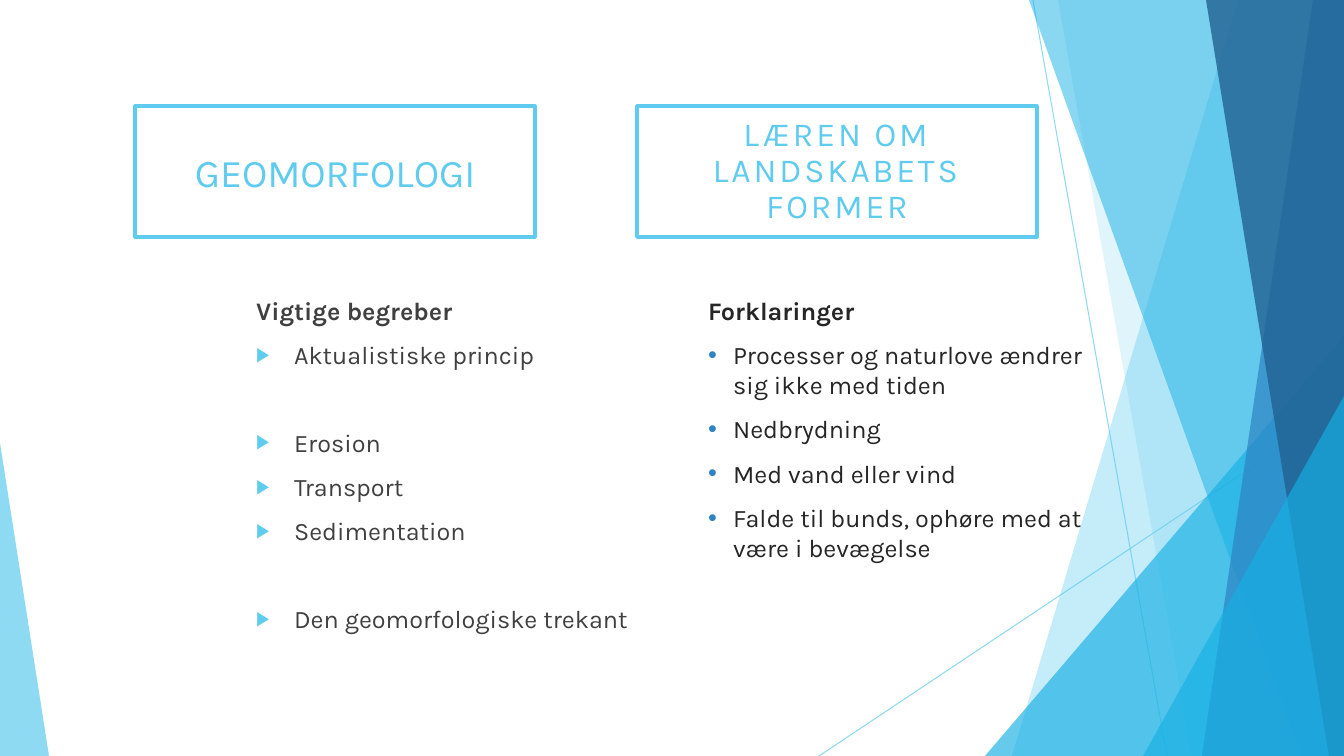
from lxml.etree import SubElement
from pptx import Presentation
from pptx.dml.color import RGBColor
from pptx.enum.shapes import MSO_CONNECTOR, MSO_SHAPE
from pptx.enum.text import MSO_ANCHOR, MSO_AUTO_SIZE, PP_ALIGN
from pptx.oxml.ns import qn
from pptx.util import Pt

EMU_PER_PX = 914400 / 100.8
WIDTH, HEIGHT = 1344, 756
FONT = "Karla"
COLORS = {
    "sky": "5FCBEF",
    "cyan": "17B0E4",
    "blue": "2E83C3",
    "navy": "226292",
    "gray": "404040",
    "ink": "262626",
    "white": "FFFFFF",
}


def px(*lengths):
    return [round(length * EMU_PER_PX) for length in lengths]


def fade(shape, percent):
    """Set the opacity of every colour in the shape's fill and line."""
    for color in list(shape.element.spPr.iter(qn("a:srgbClr"))):
        SubElement(color, qn("a:alpha"), val=str(percent * 1000))


rgb = {name: RGBColor.from_string(value) for name, value in COLORS.items()}

prs = Presentation()
prs.slide_width, prs.slide_height = px(WIDTH, HEIGHT)
slide = prs.slides.add_slide(prs.slide_layouts[3])
shapes = slide.shapes
title, concepts, explanations = slide.placeholders

# Thin rays
for ends in [(1033, 0, 1167, HEIGHT), (WIDTH, 406, 819, HEIGHT)]:
    ray = shapes.add_connector(MSO_CONNECTOR.STRAIGHT, *px(*ends))
    ray.line.color.rgb = rgb["sky"]
    ray.line.width = Pt(0.75)
    fade(ray, 70)
    SubElement(ray.element.spPr, qn("a:effectLst"))

# Facets, back to front: a band has the x of its left edge at top and bottom,
# a triangle has left, top, width, height and the place of its apex
facets = [
    ((1238, 1012), None, "sky", 36),
    ((1058, 1192), None, "sky", 20),
    ((985, 336, 359, 420), 1, "cyan", 66),
    ((1029, 1301), None, "cyan", 50),
    ((1313, 1202), None, "blue", 70),
    ((1206, 1329), None, "navy", 80),
    ((1143, 396, 201, 360), 1, "cyan", 66),
    ((0, 443, 49, 313), 0, "sky", 70),
]
for place, apex, color, opacity in facets:
    if apex is None:
        top_x, bottom_x = place
        outline = shapes.build_freeform(top_x, 0, scale=EMU_PER_PX)
        outline.add_line_segments([(WIDTH, 0), (WIDTH, HEIGHT), (bottom_x, HEIGHT)])
        facet = outline.convert_to_shape()
    else:
        facet = shapes.add_shape(MSO_SHAPE.ISOSCELES_TRIANGLE, *px(*place))
        facet.adjustments[0] = apex
    facet.shadow.inherit = False
    facet.fill.solid()
    facet.fill.fore_color.rgb = rgb[color]
    facet.line.fill.background()
    fade(facet, opacity)

# Framed headings
subtitle = shapes.add_shape(MSO_SHAPE.RECTANGLE, *px(637, 106, 400, 131))
subtitle.shadow.inherit = False
subtitle.fill.solid()
subtitle.fill.fore_color.rgb = rgb["white"]
title.left, title.top, title.width, title.height = px(135, 106, 400, 131)

headings = [
    (title, "GEOMORFOLOGI", 28, 2.25, 10, 5, 1, 0),
    (subtitle, "LÆREN OM LANDSKABETS FORMER", 24, 2.5, 20, 20, 0.9, 2),
]
for heading, text, size, border, inset_x, inset_y, leading, tracking in headings:
    heading.line.color.rgb = rgb["sky"]
    heading.line.width = Pt(border)
    frame = heading.text_frame
    frame.auto_size = MSO_AUTO_SIZE.NONE
    frame.word_wrap = True
    frame.vertical_anchor = MSO_ANCHOR.MIDDLE
    frame.margin_left, frame.margin_right = px(inset_x, inset_x)
    frame.margin_top, frame.margin_bottom = px(inset_y, inset_y)
    paragraph = frame.paragraphs[0]
    paragraph.alignment = PP_ALIGN.CENTER
    paragraph.line_spacing = leading
    run = paragraph.add_run()
    run.text = text
    run.font.name = FONT
    run.font.size = Pt(size)
    run.font.color.rgb = rgb["sky"]
    run.font._element.set("spc", str(tracking * 100))

# Lists: each item has its text and the space before it in points
NEAR, FAR = 10, 41
columns = [
    (concepts, 246, "gray", "▶", "sky", 80, 38, [
        ("Vigtige begreber", 0),
        ("Aktualistiske princip", NEAR),
        ("Erosion", FAR),
        ("Transport", NEAR),
        ("Sedimentation", NEAR),
        ("Den geomorfologiske trekant", FAR),
    ]),
    (explanations, 698, "ink", "•", "blue", 100, 25, [
        ("Forklaringer", 0),
        ("Processer og naturlove ændrer sig ikke med tiden", NEAR),
        ("Nedbrydning", NEAR),
        ("Med vand eller vind", NEAR),
        ("Falde til bunds, ophøre med at være i bevægelse", NEAR),
    ]),
]
for column, left, color, bullet, bullet_color, bullet_size, indent, items in columns:
    column.left, column.top, column.width, column.height = px(left, 290, 400, 342)
    frame = column.text_frame
    frame.auto_size = MSO_AUTO_SIZE.NONE
    frame.word_wrap = True
    for index, (text, gap) in enumerate(items):
        is_heading = index == 0
        paragraph = frame.paragraphs[0] if is_heading else frame.add_paragraph()
        properties = paragraph._p.get_or_add_pPr()
        hang = 0 if is_heading else px(indent)[0]
        properties.set("marL", str(hang))
        properties.set("indent", str(-hang))
        if is_heading:
            SubElement(properties, qn("a:buNone"))
        else:
            tint = SubElement(properties, qn("a:buClr"))
            SubElement(tint, qn("a:srgbClr"), val=COLORS[bullet_color])
            SubElement(properties, qn("a:buSzPct"), val=str(bullet_size * 1000))
            SubElement(properties, qn("a:buChar"), char=bullet)
        paragraph.space_before = Pt(gap)
        run = paragraph.add_run()
        run.text = text
        run.font.name = FONT
        run.font.size = Pt(18)
        run.font.bold = is_heading
        run.font.color.rgb = rgb[color]

# Text stands in front of the facets
tree = title.element.getparent()
for block in (title, concepts, subtitle, explanations):
    tree.append(block.element)

prs.save("out.pptx")
